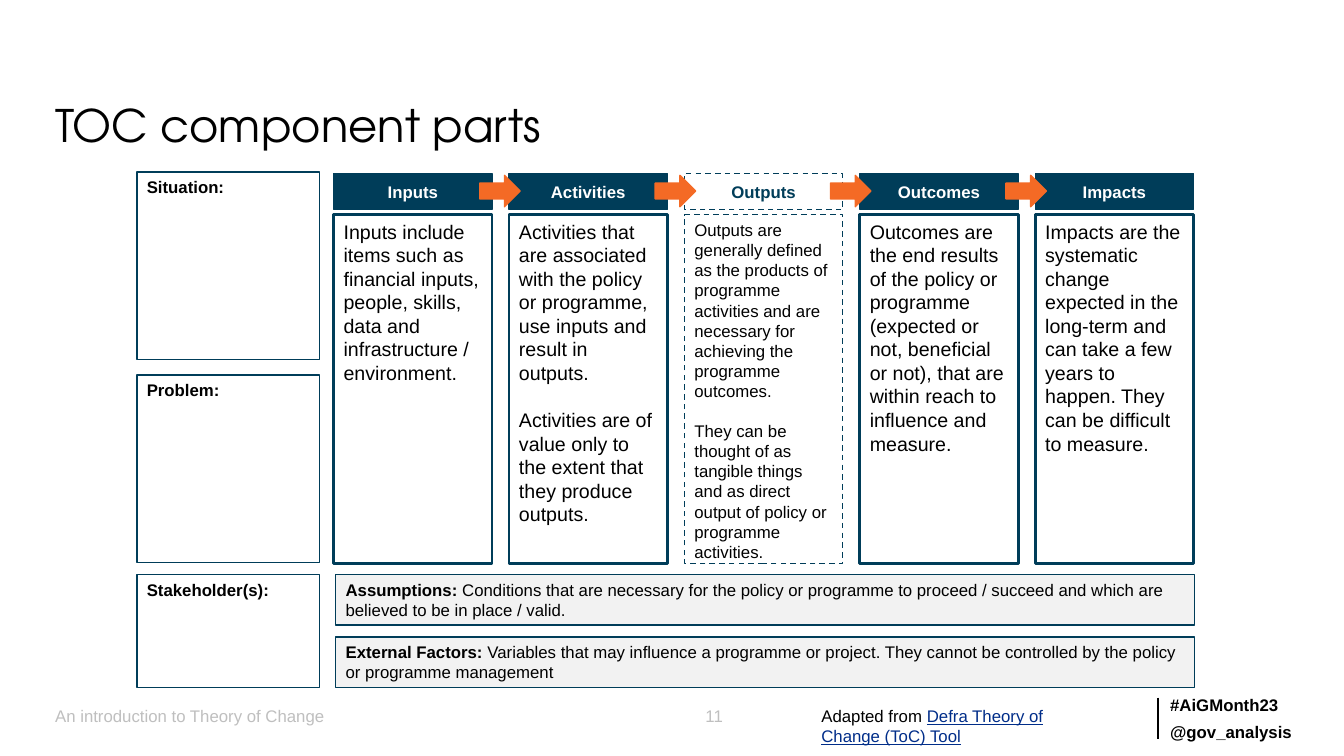
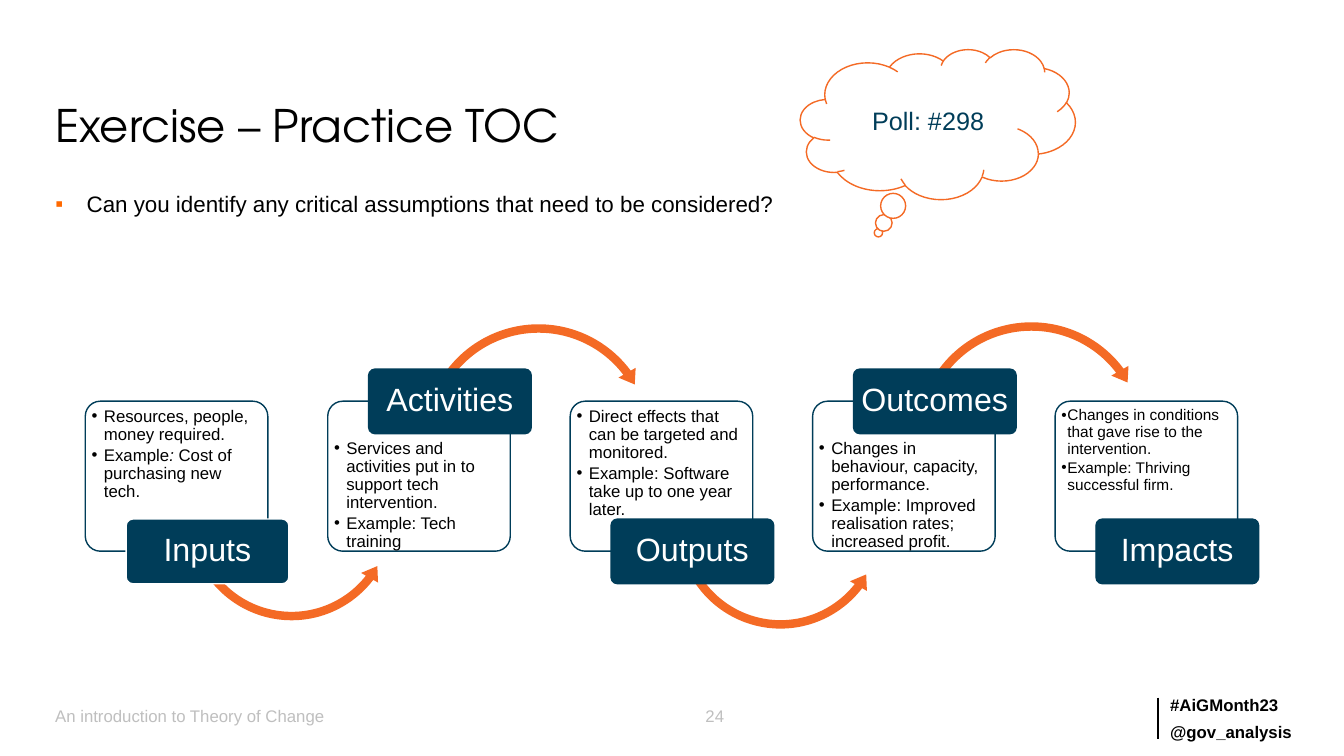
import pptx
import pptx.util
import pptx.dml.color
import pptx.enum.dml
import pptx.enum.shapes
import pptx.enum.text
import pptx.oxml.ns
from lxml import etree

Cm = pptx.util.Cm
Pt = pptx.util.Pt
SHAPE = pptx.enum.shapes.MSO_SHAPE
ALIGN = pptx.enum.text.PP_ALIGN
ANCHOR = pptx.enum.text.MSO_ANCHOR
qn = pptx.oxml.ns.qn

COLORS = {"ink": "000000", "navy": "003D59", "orange": "F46A25", "bullet": "FF6900",
          "white": "FFFFFF", "panel": "F2F2F2", "muted": "BFBFBF", "link": "002D89"}
BODY_FONT = "Arial"
TITLE_FONT = "TeX Gyre Adventor"

FOOTER = "An introduction to Theory of Change"
HANDLES = ["#AiGMonth23", "@gov_analysis"]

PARTS_TITLE = "TOC component parts"
SIDE_BOXES = [("Situation:", 4.34, 4.72), ("Problem:", 9.45, 4.72), ("Stakeholder(s):", 14.48, 2.84)]
COMPONENTS = [
    ("Inputs", ["Inputs include items such as financial inputs, people, skills, data and "
                "infrastructure / environment."]),
    ("Activities", ["Activities that are associated with the policy or programme, use inputs "
                    "and result in outputs.",
                    "Activities are of value only to the extent that they produce outputs."]),
    ("Outputs", ["Outputs are generally defined as the products of programme activities and "
                 "are necessary for achieving the programme outcomes.",
                 "They can be thought of as tangible things and as direct output of policy or "
                 "programme activities."]),
    ("Outcomes", ["Outcomes are the end results of the policy or programme (expected or not, "
                  "beneficial or not), that are within reach to influence and measure."]),
    ("Impacts", ["Impacts are the systematic change expected in the long-term and can take a "
                 "few years to happen. They can be difficult to measure."]),
]
DASHED = "Outputs"
CONDITIONS = [
    ("Assumptions: ", "Conditions that are necessary for the policy or programme to proceed / "
                      "succeed and which are believed to be in place / valid."),
    ("External Factors: ", "Variables that may influence a programme or project. They cannot be "
                           "controlled by the policy or programme management"),
]
CREDIT = [("Adapted from ", ""), ("Defra Theory of Change (ToC) Tool", "u")]

EXERCISE_TITLE = "Exercise – Practice TOC"
QUESTION = "Can you identify any critical assumptions that need to be considered?"
CLOUD = "Poll: #298"
STEPS = [
    {"name": "Inputs", "arrow": (4.62, 10.31), "edge": "white",
     "points": ["Resources, people, money required.",
                [("Example", ""), (": ", "i"), ("Cost of purchasing new tech.", "")]]},
    {"name": "Activities", "arrow": (10.54, 8.03),
     "points": ["Services and activities put in to support tech intervention.",
                "Example: Tech training"]},
    {"name": "Outputs", "arrow": (16.94, 10.52),
     "points": ["Direct effects that can be targeted and monitored.",
                "Example: Software take up to one year later."]},
    {"name": "Outcomes", "arrow": (22.96, 7.98),
     "points": ["Changes in behaviour, capacity, performance.",
                "Example: Improved realisation rates; increased profit."]},
    {"name": "Impacts", "size": 11, "indent": 0.15,
     "points": ["Changes in conditions that gave rise to the intervention.",
                "Example: Thriving successful firm."]},
]
ARC_DOWN = (SHAPE.LEFT_CIRCULAR_ARROW, 5.46, (0.039, 4.881, 22.636, 90.245, 0.045))
ARC_UP = (SHAPE.CIRCULAR_ARROW, 6.07, (0.035, 4.369, 193.876, 125.755, 0.041))


def rgb(name):
    return pptx.dml.color.RGBColor.from_string(COLORS[name])


def box(x, y, w, h):
    return Cm(x), Cm(y), Cm(w), Cm(h)


def add_bullet(p, char, indent, color):
    pPr = p._p.get_or_add_pPr()
    pPr.set("marL", str(Cm(indent)))
    pPr.set("indent", str(-Cm(indent)))
    clr = etree.SubElement(pPr, qn("a:buClr"))
    etree.SubElement(clr, qn("a:srgbClr")).set("val", COLORS[color])
    etree.SubElement(pPr, qn("a:buFont")).set("typeface", BODY_FONT)
    etree.SubElement(pPr, qn("a:buChar")).set("char", char)


def write(sp, paragraphs, size=12, color="ink", bold=False, font=BODY_FONT, align=ALIGN.LEFT,
          anchor=ANCHOR.TOP, insets=None, spacing=1.0, before=0, after=0, bullet=None, wrap=True):
    tf = sp.text_frame
    tf.auto_size = pptx.enum.text.MSO_AUTO_SIZE.NONE
    tf.word_wrap = wrap
    tf.vertical_anchor = anchor
    if insets:
        tf.margin_left, tf.margin_top, tf.margin_right, tf.margin_bottom = map(Cm, insets)
    for i, runs in enumerate(paragraphs):
        p = tf.add_paragraph() if i else tf.paragraphs[0]
        if bullet:
            add_bullet(p, *bullet)
        p.alignment = align
        p.line_spacing = spacing
        p.space_before = Pt(before if i else 0)
        p.space_after = Pt(after)
        for text, style in [(runs, "")] if isinstance(runs, str) else runs:
            r = p.add_run()
            r.text = text
            r.font.name = font
            r.font.size = Pt(size)
            r.font.bold = bold or "b" in style
            r.font.italic = "i" in style
            r.font.underline = "u" in style
            r.font.color.rgb = rgb("link" if "u" in style else color)


def add_text(s, at, paragraphs, **style):
    write(s.shapes.add_textbox(*box(*at)), paragraphs, **style)


def add_shape(s, kind, at, fill=None, line=None, width=1, dash=False, adj=()):
    sp = s.shapes.add_shape(kind, *box(*at))
    sp.shadow.inherit = False
    if fill:
        sp.fill.solid()
        sp.fill.fore_color.rgb = rgb(fill)
    else:
        sp.fill.background()
    if line:
        sp.line.color.rgb = rgb(line)
        sp.line.width = Pt(width)
        if dash:
            sp.line.dash_style = pptx.enum.dml.MSO_LINE.DASH
    else:
        sp.line.fill.background()
    for i, value in enumerate(adj):
        sp.adjustments[i] = value
    return sp


def place(sp, at):
    sp.left, sp.top, sp.width, sp.height = box(*at)


def add_slide(prs, layout, title, number):
    s = prs.slides.add_slide(prs.slide_layouts[layout])
    place(s.shapes.title, (1.14, 1.02, 27.58, 2.95))
    write(s.shapes.title, [title], size=32, font=TITLE_FONT, anchor=ANCHOR.BOTTOM, spacing=0.9)
    add_text(s, (29.24, 17.45, 4.19, 1.4), HANDLES, bold=True, spacing=0.9, before=6)
    rule = s.shapes.add_connector(pptx.enum.shapes.MSO_CONNECTOR.STRAIGHT,
                                  Cm(29.18), Cm(17.58), Cm(29.18), Cm(18.62))
    rule.line.color.rgb = rgb("ink")
    rule.line.width = Pt(1.5)
    etree.SubElement(rule._element.spPr, qn("a:effectLst"))
    add_text(s, (17.53, 17.65, 1.88, 1.02), [number], color="muted")
    add_text(s, (1.14, 17.65, 16.41, 1.02), [FOOTER], color="muted")
    return s


def build_parts(prs):
    s = add_slide(prs, 5, PARTS_TITLE, "11")
    for label, top, height in SIDE_BOXES:
        sp = add_shape(s, SHAPE.RECTANGLE, (3.45, top, 4.6, height), line="navy")
        write(sp, [label], bold=True)

    left, pitch, width = 8.41, 4.42, 3.99
    for i, (name, paragraphs) in enumerate(COMPONENTS):
        x = left + i * pitch
        dashed = name == DASHED
        size = 12 if dashed else 14
        head = add_shape(s, SHAPE.RECTANGLE, (x, 4.37, width, 0.91),
                         None if dashed else "navy", "navy", dash=dashed)
        write(head, [name], color="navy" if dashed else "white", bold=True,
              align=ALIGN.CENTER, anchor=ANCHOR.MIDDLE)
        body = add_shape(s, SHAPE.RECTANGLE, (x, 5.41, width, 8.79), "white", "navy",
                         1 if dashed else 2, dashed)
        write(body, paragraphs, size=size, before=round(size * 1.2))
    for i in range(len(COMPONENTS) - 1):
        x = left + i * pitch + width - 0.31
        add_shape(s, SHAPE.RIGHT_ARROW, (x, 4.42, 1.02, 0.79), "orange", "orange")

    for i, (label, text) in enumerate(CONDITIONS):
        sp = add_shape(s, SHAPE.RECTANGLE, (8.46, 14.48 + i * 1.57, 21.64, 1.27), "panel", "navy")
        write(sp, [[(label, "b"), (text, "")]], after=3)
    add_text(s, (20.45, 17.65, 6.45, 1.27), [CREDIT])


def build_exercise(prs):
    s = add_slide(prs, 1, EXERCISE_TITLE, "24")
    body = s.placeholders[1]
    place(body, (1.14, 4.75, 31.6, 2.41))
    write(body, [QUESTION], size=16, spacing=0.9, bullet=("▪", 0.79, "bullet"))

    left, pitch = 2.15, 6.11
    for i, step in enumerate(STEPS):
        x = left + i * pitch
        label_on_top = i % 2 == 1
        card = add_shape(s, SHAPE.ROUNDED_RECTANGLE, (x, 10.11, 4.6, 3.78), "white", "navy",
                         adj=(0.1,))
        tint = card._element.spPr.find(qn("a:solidFill")).find(qn("a:srgbClr"))
        etree.SubElement(tint, qn("a:alpha")).set("val", "90000")
        write(card, step["points"], size=step.get("size", 12), spacing=0.9, after=2,
              insets=(0.05, 0.86 if label_on_top else 0.05, 0.05, 0.05),
              bullet=("•", step.get("indent", 0.31), "ink"))
        if "arrow" in step:
            kind, side, adj = ARC_UP if label_on_top else ARC_DOWN
            add_shape(s, kind, (*step["arrow"], side, side), "orange", adj=adj)
        label = add_shape(s, SHAPE.ROUNDED_RECTANGLE,
                          (x + 1.03, 9.3 if label_on_top else 13.08, 4.1, 1.63),
                          "navy", step.get("edge", "navy"), adj=(0.1,))
        write(label, [step["name"]], size=23, color="white", align=ALIGN.CENTER,
              anchor=ANCHOR.MIDDLE, insets=(0.13, 0.08, 0.13, 0.08), spacing=0.9, wrap=False)

    cloud = add_shape(s, SHAPE.CLOUD_CALLOUT, (20.17, 1.24, 6.93, 3.78), "white", "orange",
                      adj=(-0.216, 0.724))
    write(cloud, [CLOUD], size=18, color="navy", align=ALIGN.CENTER, anchor=ANCHOR.MIDDLE)


def main():
    prs = pptx.Presentation()
    prs.slide_width, prs.slide_height = Cm(33.87), Cm(19.05)
    build_parts(prs)
    build_exercise(prs)
    prs.save("out.pptx")


if __name__ == "__main__":
    main()
